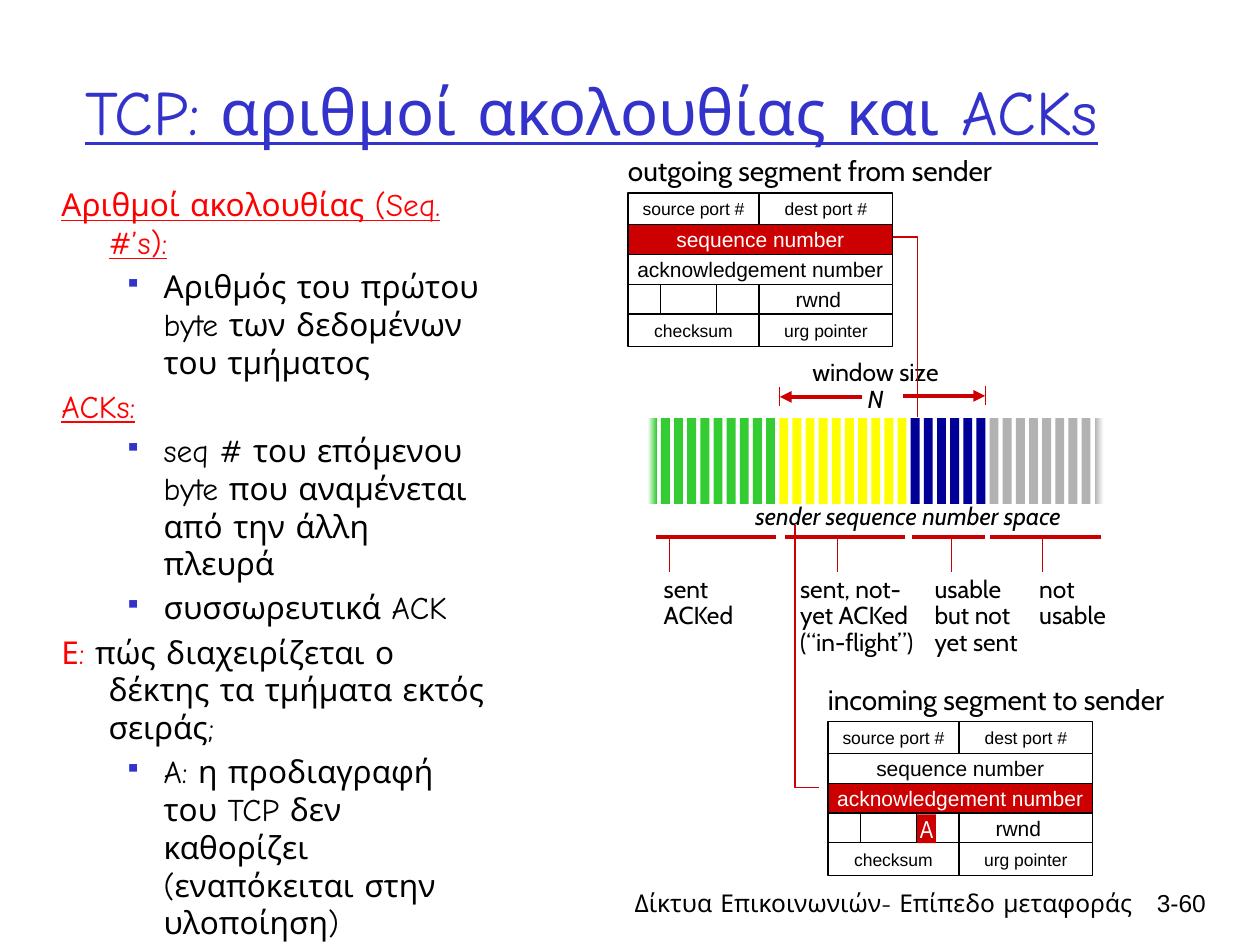
from lxml.etree import SubElement
from pptx import Presentation
from pptx.dml.color import RGBColor
from pptx.enum.shapes import MSO_CONNECTOR, MSO_SHAPE
from pptx.enum.text import MSO_ANCHOR as Anchor, PP_ALIGN as Align
from pptx.oxml.ns import qn
from pptx.util import Cm, Pt

COLORS = {
    "black": "000000", "white": "FFFFFF", "title": "3333CC", "heading": "FF0000",
    "accent": "CC0000", "acked": "33CC33", "in_flight": "FFFF00",
    "usable": "000099", "unusable": "B2B2B2",
}


def rgb(name):
    return RGBColor.from_string(COLORS[name])


def style(font, size, face, color="black", underline=None, italic=None):
    font.size, font.name = Pt(size), face
    font.color.rgb = rgb(color)
    font.underline, font.italic = underline, italic


def add_frame(page, left, top, width, height, wrap=True, inset=0.25, anchor=Anchor.TOP):
    box = page.shapes.add_textbox(Cm(left), Cm(top), Cm(width), Cm(height))
    frame = box.text_frame
    frame.word_wrap = wrap
    frame.vertical_anchor = anchor
    frame.margin_left = frame.margin_right = Cm(inset)
    frame.margin_top = frame.margin_bottom = Cm(inset / 2)
    return frame


def add_lines(frame, lines, size, face, color="black", align=Align.LEFT, spacing=None, **looks):
    for index, line in enumerate(lines):
        para = frame.add_paragraph() if index else frame.paragraphs[0]
        para.text = line
        para.alignment = align
        para.line_spacing = spacing
        style(para.font, size, face, color, **looks)


def add_rule(page, start, end, color="accent", width=0.75, arrow=False):
    points = [Cm(value) for value in (*start, *end)]
    rule = page.shapes.add_connector(MSO_CONNECTOR.STRAIGHT, *points)
    rule.line.color.rgb = rgb(color)
    rule.line.width = Pt(width)
    if arrow:
        SubElement(rule.line._get_or_add_ln(), qn("a:tailEnd"), type="triangle")
    SubElement(rule._element.spPr, qn("a:effectLst"))


def add_block(page, left, top, width, height, fill=None, outline=None):
    block = page.shapes.add_shape(MSO_SHAPE.RECTANGLE, Cm(left), Cm(top), Cm(width), Cm(height))
    block.shadow.inherit = False
    if fill:
        block.fill.solid()
        block.fill.fore_color.rgb = rgb(fill)
    else:
        block.fill.background()
    if outline:
        block.line.color.rgb = rgb(outline)
        block.line.width = Pt(0.75)
    else:
        block.line.fill.background()
    return block


def add_elbow(page, *points):
    start, *rest = [(Cm(x), Cm(y)) for x, y in points]
    builder = page.shapes.build_freeform(*start)
    builder.add_line_segments(rest, close=False)
    elbow = builder.convert_to_shape()
    elbow.shadow.inherit = False
    elbow.fill.background()
    elbow.line.color.rgb = rgb("accent")
    elbow.line.width = Pt(0.75)


def add_segment(page, left, top, caption, marked_row):
    width, split = 5.34, 2.64
    rows = [0, 0.64, 1.24, 1.84, 2.44, 3.1]
    marked_top, marked_bottom = rows[marked_row:marked_row + 2]
    add_block(page, left, top + marked_top, width, marked_bottom - marked_top, "accent")
    add_block(page, left, top, width, rows[-1], outline="black")
    cells = [
        (0, 0, split, "source port #", 10), (0, split, width, "dest port #", 10),
        (1, 0, width, "sequence number", 12), (2, 0, width, "acknowledgement number", 12),
        (3, split, width - 0.3, "rwnd", 12),
        (4, 0, split, "checksum", 10), (4, split, width, "urg pointer", 10),
    ]
    for row, start, end, label, size in cells:
        frame = add_frame(page, left + start, top + rows[row], end - start,
                          rows[row + 1] - rows[row], False, 0, Anchor.MIDDLE)
        color = "white" if row == marked_row else "black"
        add_lines(frame, [label], size, "Arial", color, Align.CENTER)
    for y in rows[1:-1]:
        add_rule(page, (left, top + y), (left + width, top + y), "black")
    for x, first, last in [(split, 0, 1), (split, 3, 5), (0.66, 3, 4), (1.79, 3, 4)]:
        add_rule(page, (left + x, top + rows[first]), (left + x, top + rows[last]), "black")
    frame = add_frame(page, left - 0.25, top - 0.91, 8, 0.94, False)
    add_lines(frame, [caption], 16, "Cabin")


def add_ack_flag(page, left, top):
    frame = add_block(page, left, top, 0.38, 0.58, "accent").text_frame
    frame.word_wrap = False
    frame.vertical_anchor = Anchor.MIDDLE
    frame.margin_left = frame.margin_right = frame.margin_top = frame.margin_bottom = 0
    add_lines(frame, ["A"], 14, "Arial Narrow", "white", Align.CENTER)


def fade(bar, first, last):
    bar.fill.gradient()
    bar.fill.gradient_angle = 0
    for stop, color in zip(bar.fill.gradient_stops, (first, last)):
        stop.color.rgb = rgb(color)


def add_number_space(page, left, top, width):
    bar_width = 0.18
    kinds = ["acked"] * 10 + ["in_flight"] * 10 + ["usable"] * 6 + ["unusable"] * 9
    pitch = (width - bar_width) / (len(kinds) - 1)
    bars = [add_block(page, left + index * pitch, top, bar_width, 1.73, kind)
            for index, kind in enumerate(kinds)]
    fade(bars[0], "white", "acked")
    fade(bars[-1], "unusable", "white")

    legend = [
        (0.17, 2.59, 0.43, 0.07, 1.93, ["sent", "ACKed"]),
        (2.76, 5.18, 3.83, 2.82, 2.97, ["sent, not-yet ACKed", "(“in-flight”)"]),
        (5.33, 6.8, 6.12, 5.53, 2.97, ["usable", "but not", "yet sent"]),
        (6.9, 9.14, 7.95, 7.64, 2.29, ["not", "usable"]),
    ]
    for start, end, tick, label_left, label_width, lines in legend:
        add_rule(page, (left + start, top + 2.39), (left + end, top + 2.39), width=2.25)
        add_rule(page, (left + tick, top + 2.44), (left + tick, top + 3.1))
        frame = add_frame(page, left + label_left, top + 3.08, label_width, 1.85)
        add_lines(frame, lines, 14, "Cabin", spacing=0.9)

    frame = add_frame(page, left + 3, top - 1.29, 3.18, 1.32, False)
    add_lines(frame, ["window size", "N"], 14, "Cabin", align=Align.CENTER, spacing=0.9)
    frame.paragraphs[1].font.italic = True
    for tail, tip, y in [(5.15, 6.8, -0.45), (4.31, 2.66, -0.43)]:
        add_rule(page, (left + tail, top + y), (left + tip, top + y), width=2.25, arrow=True)
        add_rule(page, (left + tip, top + y - 0.19), (left + tip, top + y + 0.19))

    frame = add_frame(page, left + 1.25, top + 1.55, 8, 0.84, False)
    add_lines(frame, ["sender sequence number space"], 14, "Cabin", align=Align.CENTER, italic=True)


def add_notes_list(page, left, top, width, height):
    frame = add_frame(page, left, top, width, height)
    items = [
        (0, [("Αριθμοί ακολουθίας (Seq. #’s):", None)]),
        (1, [("Αριθμός του πρώτου byte των δεδομένων του τμήματος", None)]),
        (0, [("ACKs:", None)]),
        (1, [("seq # του επόμενου byte που αναμένεται από την άλλη πλευρά", None)]),
        (1, [("συσσωρευτικά ACK", None)]),
        (2, [("Ε: ", "heading"), ("πώς διαχειρίζεται ο δέκτης τα τμήματα εκτός σειράς;", None)]),
        (1, [("A: η προδιαγραφή του TCP δεν καθορίζει (εναπόκειται στην υλοποίηση)", None)]),
    ]
    for index, (kind, spans) in enumerate(items):
        para = frame.add_paragraph() if index else frame.paragraphs[0]
        bulleted = kind == 1
        margin, indent = (2.06, -0.79) if bulleted else (0.95, -0.95)
        props = para._p.get_or_add_pPr()
        props.set("marL", str(Cm(margin)))
        props.set("indent", str(Cm(indent)))
        if bulleted:
            para.level = 1
            tint = SubElement(props, qn("a:buClr"))
            SubElement(tint, qn("a:srgbClr"), val=COLORS["title"])
            SubElement(props, qn("a:buSzPct"), val="75000")
            SubElement(props, qn("a:buChar"), char="▪")
        if index:
            para.space_before = Pt(3.6)
        heading = kind == 0
        style(para.font, 18, "Comic Neue", "heading" if heading else "black", heading)
        for text, color in spans:
            span = para.add_run()
            span.text = text
            if color:
                span.font.color.rgb = rgb(color)


def add_footer(page, left, top, width, height):
    number_width = 1.88
    for x, w, text, face in [(left, 11.4, "Δίκτυα Επικοινωνιών- Επίπεδο μεταφοράς", "Comic Neue"),
                             (left + width - number_width, number_width, "3-60", "Arial")]:
        add_lines(add_frame(page, x, top, w, height), [text], 14, face, align=Align.RIGHT)


def add_title(page, left, top, width, height):
    frame = add_frame(page, left, top, width, height, anchor=Anchor.MIDDLE)
    add_lines(frame, ["TCP: αριθμοί ακολουθίας και ACKs"], 36, "Comic Neue", "title", underline=True)


def main():
    deck = Presentation()
    deck.slide_width, deck.slide_height = Cm(25.4), Cm(19.05)
    page = deck.slides.add_slide(deck.slide_layouts[6])
    add_footer(page, 11.68, 17.78, 12.88, 1.27)
    add_title(page, 1.47, 0.64, 22.96, 3.18)
    add_notes_list(page, 0.99, 3.61, 9.04, 14.07)
    add_segment(page, 16.69, 14.55, "incoming segment to sender", 2)
    add_ack_flag(page, 18.49, 16.42)
    add_elbow(page, (16.51, 15.87), (16.03, 15.87), (16.03, 10.59))
    add_number_space(page, 13.06, 8.43, 9.19)
    add_segment(page, 12.66, 3.89, "outgoing segment from sender", 1)
    add_elbow(page, (18.01, 4.78), (18.49, 4.78), (18.49, 8.41))
    deck.save("out.pptx")


if __name__ == "__main__":
    main()
